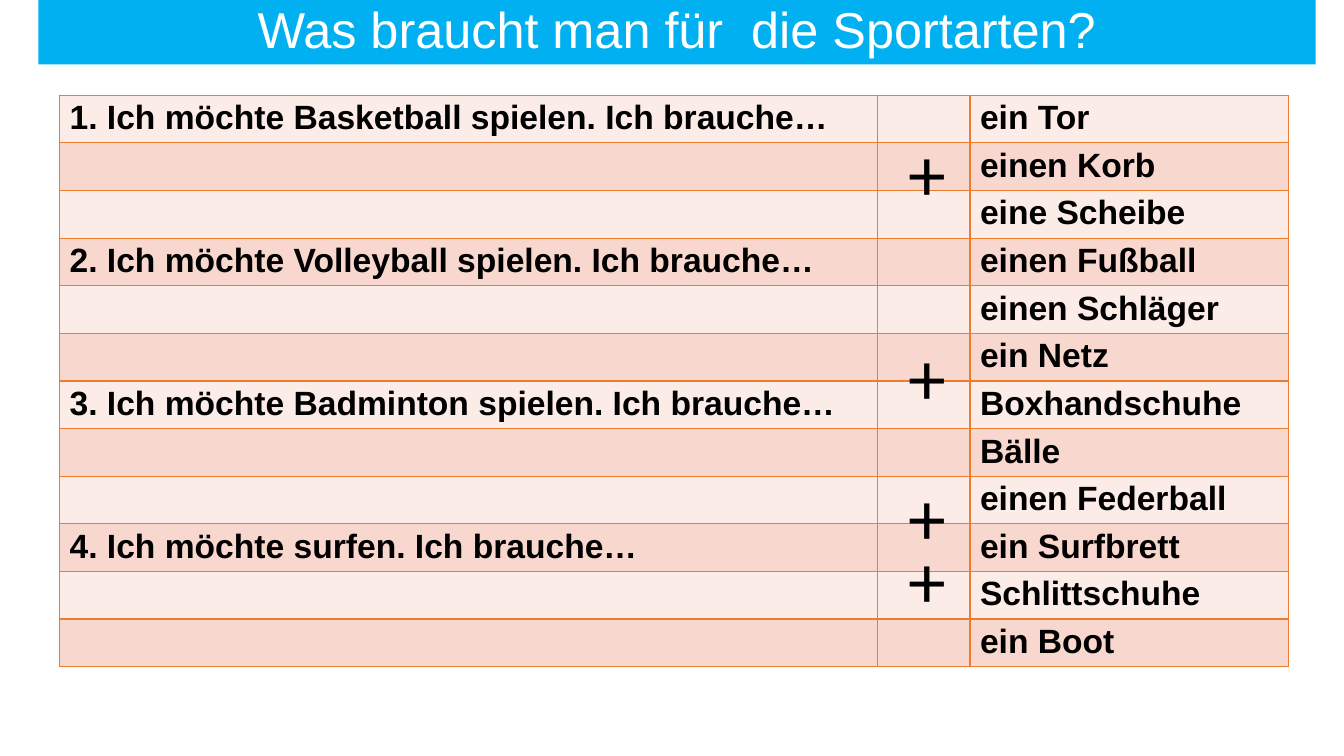
from lxml import etree
from pptx import Presentation, util as u
from pptx.dml.color import RGBColor
from pptx.enum import shapes, text
from pptx.oxml import ns

SLIDE_WIDTH, SLIDE_HEIGHT = u.Inches(13.33), u.Inches(7.5)
BANDS = ("FCECE8", "F8D7CE")
BORDER = "ED7D31"
COLUMN_SHARES = (60.84, 6.9, 23.71)
ROW_SHARE = 6.3
ROWS_PER_SPORT = 3
PLUS_TOPS = (16, 42.93, 61.47, 69.87)
SENTENCES = (
    "1. Ich möchte Basketball spielen. Ich brauche…",
    "2. Ich möchte Volleyball spielen. Ich brauche…",
    "3. Ich möchte Badminton spielen. Ich brauche…",
    "4. Ich möchte surfen. Ich brauche…",
)
THINGS = (
    "ein Tor", "einen Korb", "eine Scheibe", "einen Fußball",
    "einen Schläger", "ein Netz", "Boxhandschuhe", "Bälle",
    "einen Federball", "ein Surfbrett", "Schlittschuhe", "ein Boot",
)
TITLE_FONT = {"name": "Arial", "size": u.Pt(36), "bold": False}
CELL_FONT = {"name": "Arial", "size": u.Pt(24), "bold": True}
PLUS_FONT = {"name": "Calibri", "size": u.Pt(54), "bold": False}
CENTERED = {"alignment": text.PP_ALIGN.CENTER}


def across(share):
    return round(SLIDE_WIDTH * share / 100)


def down(share):
    return round(SLIDE_HEIGHT * share / 100)


def area(left, top, width, height):
    return across(left), down(top), across(width), down(height)


def set_values(target, values):
    for name, value in values.items():
        setattr(target, name, value)


def paint(color_format, color):
    color_format.rgb = RGBColor.from_string(color)


def fill_solid(target, color):
    target.fill.solid()
    paint(target.fill.fore_color, color)


def write(frame, words, font, color, layout):
    paragraph = frame.paragraphs[0]
    set_values(paragraph, layout)
    run = paragraph.add_run()
    run.text = words
    set_values(run.font, font)
    paint(run.font.color, color)


def add_borders(cell):
    properties = cell._tc.get_or_add_tcPr()
    for position, side in enumerate(("lnL", "lnR", "lnT", "lnB")):
        line = etree.Element(ns.qn(f"a:{side}"), w=str(u.Pt(1)))
        fill = etree.SubElement(line, ns.qn("a:solidFill"))
        etree.SubElement(fill, ns.qn("a:srgbClr"), val=BORDER)
        properties.insert(position, line)


def add_title(slide):
    banner = slide.shapes.add_shape(
        shapes.MSO_SHAPE.RECTANGLE, *area(2.85, 0, 95.05, 8.53))
    banner.shadow.inherit = False
    fill_solid(banner, "00B0F0")
    banner.line.fill.background()
    banner.text_frame.vertical_anchor = text.MSO_ANCHOR.BOTTOM
    write(banner.text_frame, "Was braucht man für  die Sportarten?",
          TITLE_FONT, "FFFFFF", {**CENTERED, "line_spacing": 0.9})


def add_sports_table(slide):
    rows = len(THINGS)
    frame = slide.shapes.add_table(
        rows, len(COLUMN_SHARES),
        *area(4.43, 12.6, sum(COLUMN_SHARES), ROW_SHARE * rows))
    table = frame.table
    set_values(table, {"first_row": False, "horz_banding": False})
    for column, share in zip(table.columns, COLUMN_SHARES):
        column.width = across(share)
    for index, row in enumerate(table.rows):
        row.height = down(ROW_SHARE)
        sport, offset = divmod(index, ROWS_PER_SPORT)
        sentence = "" if offset else SENTENCES[sport]
        for cell, words in zip(row.cells, (sentence, "", THINGS[index])):
            set_values(cell, {"margin_top": u.Inches(0.04), "margin_bottom": u.Inches(0.04)})
            fill_solid(cell, BANDS[index % len(BANDS)])
            add_borders(cell)
            if words:
                write(cell.text_frame, words, CELL_FONT, "000000", {})


def add_plus(slide, top):
    box = slide.shapes.add_textbox(*area(66.84, top, 4.35, 13.47))
    set_values(box.text_frame, {
        "word_wrap": False,
        "auto_size": text.MSO_AUTO_SIZE.SHAPE_TO_FIT_TEXT,
    })
    write(box.text_frame, "+", PLUS_FONT, "000000", CENTERED)


def main():
    presentation = Presentation()
    set_values(presentation, {"slide_width": SLIDE_WIDTH, "slide_height": SLIDE_HEIGHT})
    slide = presentation.slides.add_slide(presentation.slide_layouts[6])
    add_title(slide)
    add_sports_table(slide)
    for top in PLUS_TOPS:
        add_plus(slide, top)
    presentation.save("out.pptx")


if __name__ == "__main__":
    main()
